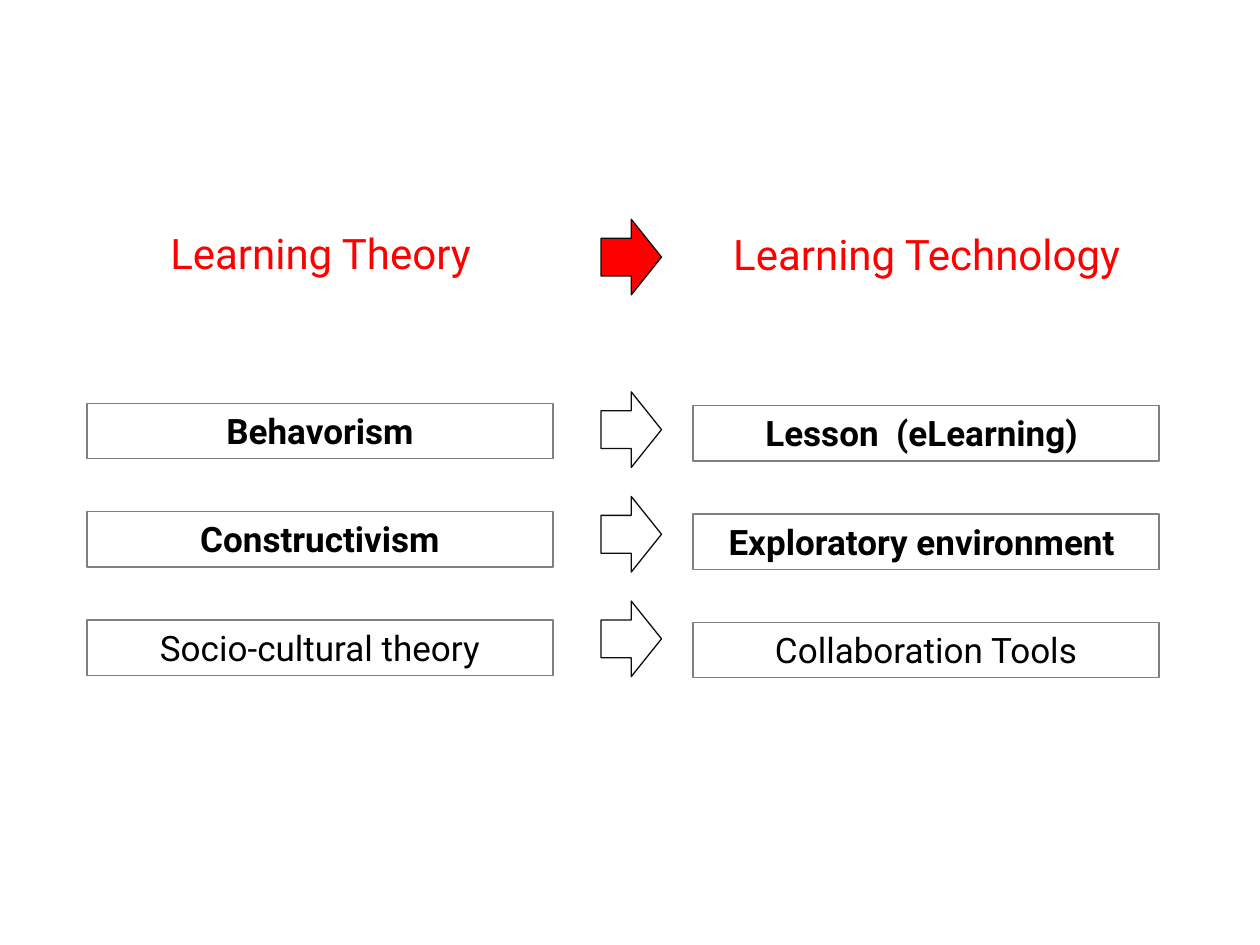
"""Build a slide that maps learning theories to learning technologies."""
from pptx import Presentation
from pptx import util as u
from pptx.dml.color import RGBColor
from pptx.enum import shapes, text

COLORS = {"red": "FF0000", "white": "FFFFFF", "black": "000000",
          "gray": "808080", "edge": "0D0D0D"}
FONT = "Roboto"
ROWS = [("Behavorism", "Lesson  (eLearning) ", True),
        ("Constructivism", "Exploratory environment ", True),
        ("Socio-cultural theory", "Collaboration Tools", False)]


def color(name):
    return RGBColor.from_string(COLORS[name])


def write(shape, words, size=20, ink="black", bold=False, anchor="TOP"):
    frame = shape.text_frame
    frame.word_wrap = True
    frame.vertical_anchor = getattr(text.MSO_ANCHOR, anchor)
    par = frame.paragraphs[0]
    par.alignment = text.PP_ALIGN.CENTER
    run = par.add_run()
    run.text = words
    font = run.font
    font.name, font.size, font.bold = FONT, u.Pt(size), bold
    font.color.rgb = color(ink)


def draw(slide, kind, place, fill, line):
    shape = slide.shapes.add_shape(kind, *map(u.Inches, place))
    shape.shadow.inherit = False
    shape.fill.solid()
    shape.fill.fore_color.rgb = color(fill)
    shape.line.color.rgb = color(line)
    shape.line.width = u.Pt(0.75)
    return shape


def add_box(slide, left, top, words, bold):
    box = draw(slide, shapes.MSO_SHAPE.RECTANGLE, (left, top, 3.7, 0.44),
               "white", "gray")
    write(box, words, bold=bold)
    box.text_frame.auto_size = text.MSO_AUTO_SIZE.SHAPE_TO_FIT_TEXT


def add_title(slide, left, top, words):
    box = slide.shapes.add_textbox(*map(u.Inches, (left, top, 5.07, 1.11)))
    write(box, words, size=24, ink="red", anchor="MIDDLE")


def add_arrow(slide, top, fill="white"):
    arrow = draw(slide, shapes.MSO_SHAPE.DOWN_ARROW, (4.71, top, 0.6, 0.48),
                 fill, "edge")
    arrow.rotation = 270


def main():
    deck = Presentation()
    deck.slide_width, deck.slide_height = u.Inches(10), u.Inches(7.5)
    slide = deck.slides.add_slide(deck.slide_layouts[6])
    add_title(slide, 0.01, 1.45, "Learning Theory")
    add_title(slide, 4.82, 1.46, "Learning Technology")
    add_arrow(slide, 1.8, "red")
    for row, (theory, tool, bold) in enumerate(ROWS):
        add_box(slide, 0.69, 3.2 + 0.86 * row, theory, bold)
        add_box(slide, 5.5, 3.22 + 0.86 * row, tool, bold)
        add_arrow(slide, 3.17 + 0.83 * row)
    deck.save("out.pptx")


if __name__ == "__main__":
    main()
